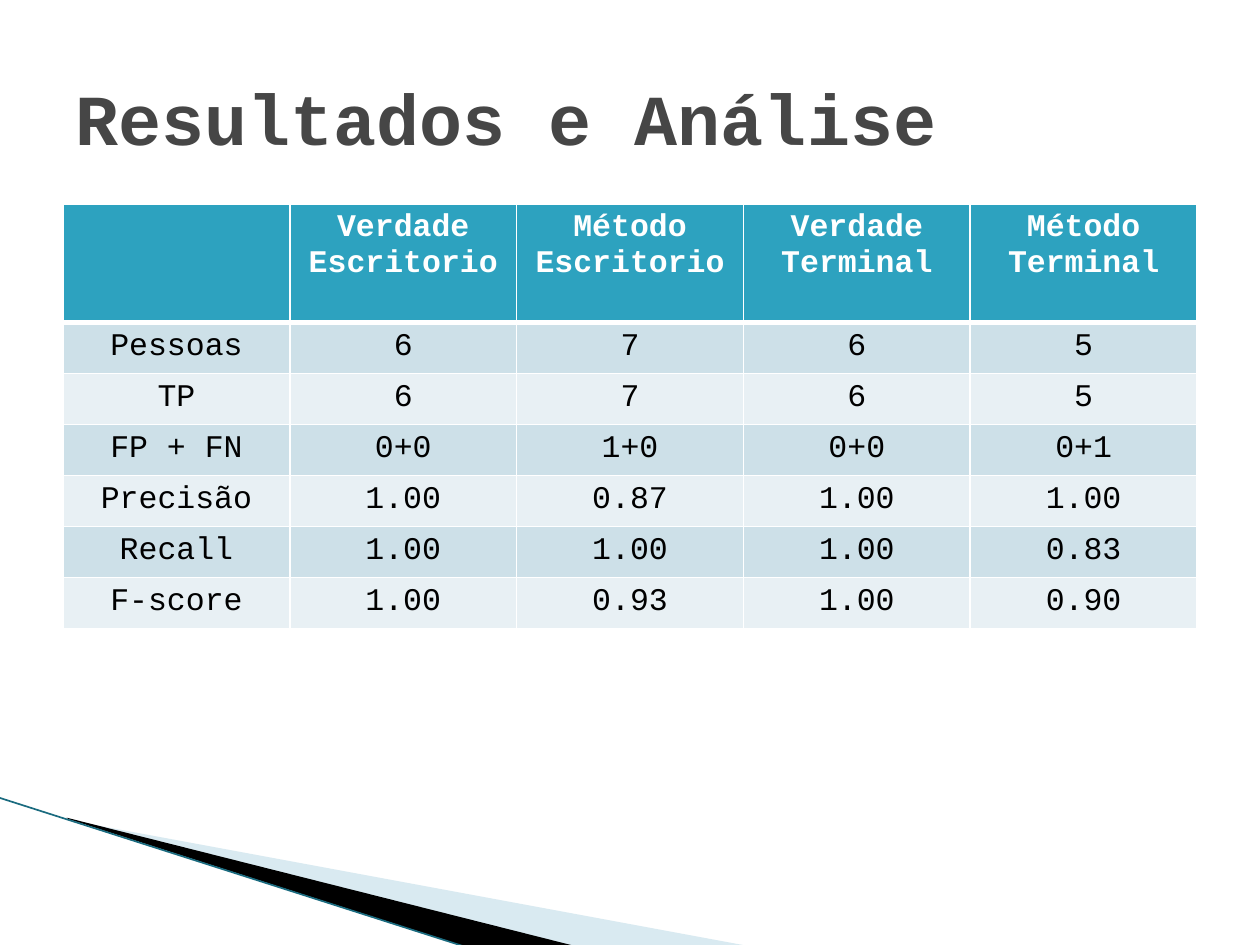
import dataclasses

import pptx
import pptx.dml.color
import pptx.enum.text
import pptx.oxml
import pptx.oxml.ns
import pptx.util

COLS, ROWS = 100, 75


@dataclasses.dataclass(frozen=True)
class Theme:
    font: str = "Courier New"
    title_size: int = 41
    table_size: int = 18
    title: str = "464646"
    text: str = "000000"
    white: str = "FFFFFF"
    header: str = "2DA2BF"
    bands: tuple = ("CDE0E8", "E8F0F4")
    pale_wedge: str = "A0CBDC"
    dark_wedge: str = "000000"
    edge: str = "1A6B7F"


def rgb(color):
    return pptx.dml.color.RGBColor.from_string(color)


class SlideBuilder:
    def __init__(self, prs, theme):
        self.theme = theme
        self.s = prs.slides.add_slide(prs.slide_layouts[6])
        self.cell_w = prs.slide_width / COLS
        self.cell_h = prs.slide_height / ROWS

    def x(self, cols):
        return pptx.util.Emu(round(cols * self.cell_w))

    def y(self, rows):
        return pptx.util.Emu(round(rows * self.cell_h))

    def style(self, p, size, color, bold):
        for r in p.runs:
            r.font.name = self.theme.font
            r.font.size = pptx.util.Pt(size)
            r.font.bold = bold
            r.font.color.rgb = rgb(color)

    def wedge(self, points, color, opacity=100):
        points = [(self.x(c), self.y(r)) for c, r in points]
        builder = self.s.shapes.build_freeform(*points[0])
        builder.add_line_segments(points[1:], close=True)
        sp = builder.convert_to_shape()
        sp.shadow.inherit = False
        sp.line.fill.background()
        sp.fill.solid()
        sp.fill.fore_color.rgb = rgb(color)
        if opacity < 100:
            clr = sp.fill._xPr.find(".//" + pptx.oxml.ns.qn("a:srgbClr"))
            alpha = pptx.oxml.parse_xml(
                f'<a:alpha {pptx.oxml.ns.nsdecls("a")} val="{opacity * 1000}"/>')
            clr.append(alpha)

    def line(self, start, end, color, width):
        ln = self.s.shapes.add_connector(
            pptx.enum.shapes.MSO_CONNECTOR.STRAIGHT,
            self.x(start[0]), self.y(start[1]), self.x(end[0]), self.y(end[1]))
        ln.line.color.rgb = rgb(color)
        ln.line.width = pptx.util.Pt(width)
        ln._element.spPr.append(pptx.oxml.parse_xml(
            f'<a:effectLst {pptx.oxml.ns.nsdecls("a")}/>'))

    def title(self, text, left, top, width, height):
        sp = self.s.shapes.add_textbox(
            self.x(left), self.y(top), self.x(width), self.y(height))
        tf = sp.text_frame
        tf.word_wrap = True
        tf.vertical_anchor = pptx.enum.text.MSO_ANCHOR.MIDDLE
        tf.text = text
        self.style(tf.paragraphs[0], self.theme.title_size, self.theme.title, True)

    def borders(self, cell, **widths):
        """Draw the cell's sides; widths in points override the 1 pt default."""
        tcPr = cell._tc.get_or_add_tcPr()
        for side in "LRTB":
            width = pptx.util.Pt(widths.get(side, 1))
            tcPr.append(pptx.oxml.parse_xml(
                f'<a:ln{side} {pptx.oxml.ns.nsdecls("a")} w="{width}"><a:solidFill>'
                f'<a:srgbClr val="{self.theme.white}"/></a:solidFill></a:ln{side}>'))

    def table(self, rows, left, top, width, header_height, body_height):
        t = self.theme
        tbl = self.s.shapes.add_table(
            len(rows), len(rows[0]), self.x(left), self.y(top),
            self.x(width), self.y(header_height + body_height)).table
        for column in tbl.columns:
            column.width = self.x(width / len(rows[0]))
        for i, values in enumerate(rows):
            header = i == 0
            tbl.rows[i].height = self.y(
                header_height if header else body_height / (len(rows) - 1))
            thick = {0: {"B": 3}, 1: {"T": 3}}.get(i, {})
            for j, value in enumerate(values):
                cell = tbl.cell(i, j)
                self.borders(cell, **thick)
                cell.fill.solid()
                cell.fill.fore_color.rgb = rgb(
                    t.header if header else t.bands[(i - 1) % 2])
                cell.text_frame.text = value
                p = cell.text_frame.paragraphs[0]
                p.alignment = pptx.enum.text.PP_ALIGN.CENTER
                self.style(p, t.table_size, t.white if header else t.text, header)


RESULTS = [
    ["", "Verdade Escritorio", "Método Escritorio", "Verdade Terminal", "Método Terminal"],
    ["Pessoas", "6", "7", "6", "5"],
    ["TP", "6", "7", "6", "5"],
    ["FP + FN", "0+0", "1+0", "0+0", "0+1"],
    ["Precisão", "1.00", "0.87", "1.00", "1.00"],
    ["Recall", "1.00", "1.00", "1.00", "0.83"],
    ["F-score", "1.00", "0.93", "1.00", "0.90"],
]


def main():
    prs = pptx.Presentation()
    prs.slide_width = pptx.util.Inches(10)
    prs.slide_height = pptx.util.Inches(7.5)
    theme = Theme()
    slide = SlideBuilder(prs, theme)
    slide.wedge([(5.5, 65.1), (59.5, 75.1), (45.6, 75.1), (5.5, 65)],
                theme.pale_wedge, opacity=40)
    slide.wedge([(5.3, 64.9), (45.7, 75.1), (37.2, 75.2), (5.4, 65)],
                theme.dark_wedge)
    slide.line((-0.1, 63.3), (37.1, 75.2), theme.edge, 0.95)
    slide.table(RESULTS, left=5, top=16.2, width=90,
                header_height=9.4, body_height=24.3)
    slide.title("Resultados e Análise", left=5, top=3, width=90, height=12.5)
    prs.save("out.pptx")


if __name__ == "__main__":
    main()
